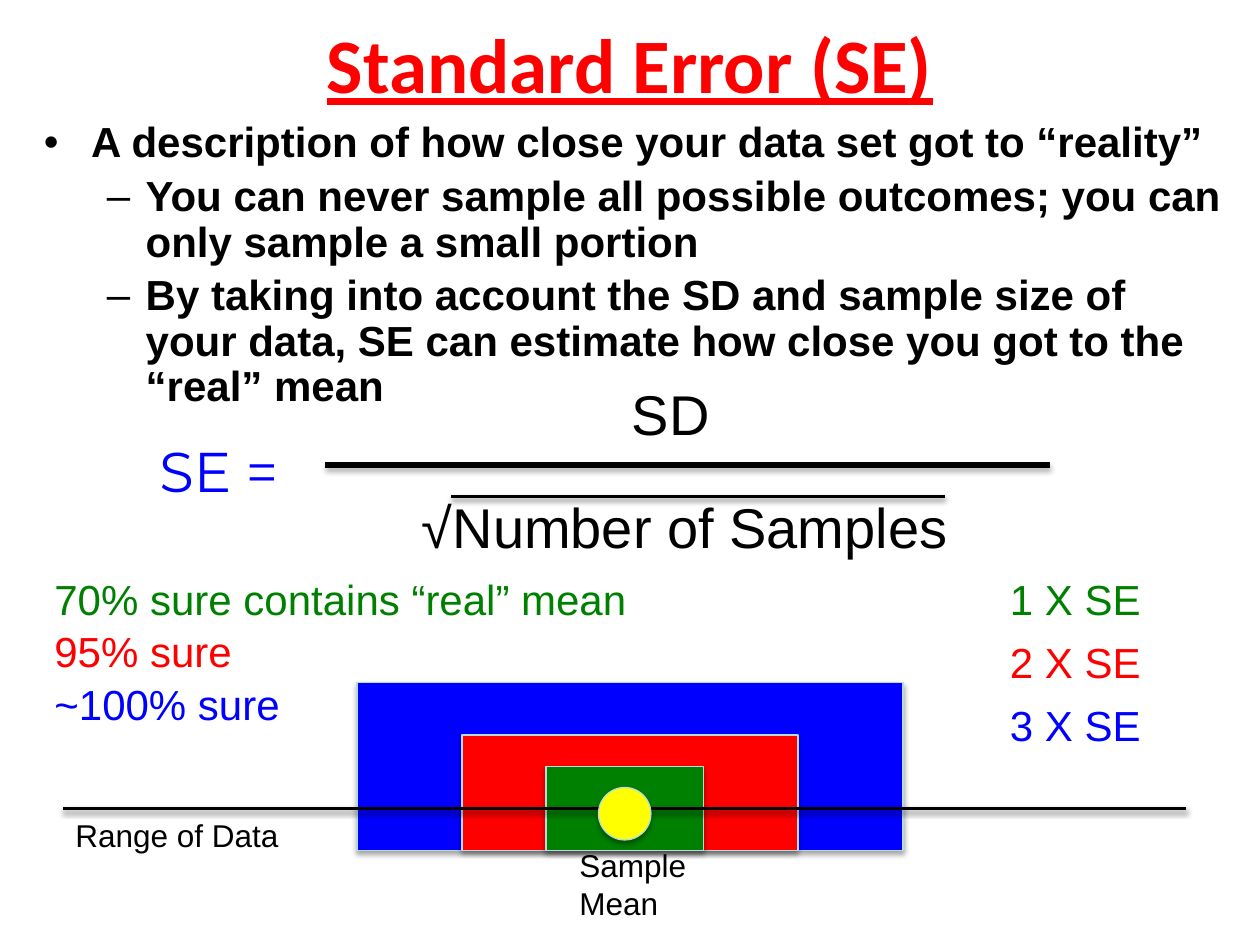
import pptx
import pptx.dml.color
import pptx.enum.shapes
import pptx.enum.text
import pptx.oxml.ns
import pptx.util
from lxml import etree

RGB = pptx.dml.color.RGBColor
SHAPES = pptx.enum.shapes.MSO_SHAPE
ALIGN = pptx.enum.text.PP_ALIGN
ANCHOR = pptx.enum.text.MSO_ANCHOR
FIT = pptx.enum.text.MSO_AUTO_SIZE

BLACK = RGB(0, 0, 0)
BLUE = RGB(0, 0, 255)
RED = RGB(255, 0, 0)
GREEN = RGB(0, 128, 0)
YELLOW = RGB(255, 255, 0)
OUTLINE = RGB(0xB6, 0xDC, 0xDF)

EMU_PER_PX = 7620  # 120 px to the inch
WIDTH, HEIGHT = 1200, 900

OUTCOMES = [
    (0, "A description of how close your data set got to “reality”"),
    (1, "You can never sample all possible outcomes; you can only sample a small portion"),
    (1, "By taking into account the SD and sample size of your data, "
        "SE can estimate how close you got to the “real” mean"),
]
# bullet, left margin and hanging indent for each level
BULLETS = [("•", 45, 45), ("–", 97, 37)]

# colour, certainty, label width, multiple, then the band's left, width, height
BANDS = [
    (BLUE, "~100% sure", 241, 3, 300, 520, 160),
    (RED, "95% sure", 194, 2, 400, 320, 110),
    (GREEN, "70% sure contains “real” mean", 575, 1, 480, 150, 80),
]


def px(*lengths):
    return [pptx.util.Emu(round(length * EMU_PER_PX)) for length in lengths]


def xml_child(parent, tag, **attributes):
    child = etree.SubElement(parent, pptx.oxml.ns.qn(tag))
    for name, value in attributes.items():
        child.set(name, str(value))
    return child


def add_shadow(effects, opacity=35, distance=1.8):
    shadow = xml_child(effects, "a:outerShdw", blurRad=pptx.util.Pt(3.1),
                       dist=pptx.util.Pt(distance), dir=5400000, rotWithShape=0)
    color = xml_child(shadow, "a:srgbClr", val=BLACK)
    xml_child(color, "a:alpha", val=opacity * 1000)


def format_span(para, text, size=24, color=BLACK, font="Arial", bold=False, underline=False):
    span = para.add_run()
    span.text = text
    span.font.size = pptx.util.Pt(size)
    span.font.name = font
    span.font.color.rgb = color
    span.font.bold = bold
    span.font.underline = underline


def add_text(page, text, left, top, width, height, wrap=True, grow=True,
             align=ALIGN.LEFT, anchor=ANCHOR.TOP, **span_format):
    box = page.shapes.add_textbox(*px(left, top, width, height))
    frame = box.text_frame
    frame.word_wrap = wrap
    frame.auto_size = FIT.SHAPE_TO_FIT_TEXT if grow else FIT.NONE
    frame.vertical_anchor = anchor
    para = frame.paragraphs[0]
    para.alignment = align
    format_span(para, text, **span_format)


def add_figure(page, kind, left, top, width, height, color):
    figure = page.shapes.add_shape(kind, *px(left, top, width, height))
    figure.fill.solid()
    figure.fill.fore_color.rgb = color
    figure.line.color.rgb = OUTLINE
    figure.line.width = pptx.util.Pt(0.75)
    figure.shadow.inherit = False
    add_shadow(figure._element.spPr.find(pptx.oxml.ns.qn("a:effectLst")))


def add_rule(page, left, top, width, weight, **shadow):
    rule = page.shapes.add_connector(pptx.enum.shapes.MSO_CONNECTOR.STRAIGHT,
                                     *px(left, top, left + width, top))
    rule.line.color.rgb = BLACK
    rule.line.width = pptx.util.Pt(weight)
    add_shadow(xml_child(rule._element.spPr, "a:effectLst"), **shadow)


def add_bands(page, left, top, width, height):
    """Nested confidence bands on a common base, with labels on both sides."""
    for color, certainty, label_width, multiple, offset, band_width, band_height in BANDS:
        add_figure(page, SHAPES.RECTANGLE, left + offset, top + height - band_height,
                   band_width, band_height, color)
        add_text(page, certainty, left, top + 50 * (multiple - 1), label_width, 60,
                 wrap=False, color=color)
        add_text(page, f"{multiple} X SE", left + width - 150, top + 60 * (multiple - 1),
                 150, 60, wrap=False, color=color)


def add_title(page, left, top, width, height):
    add_text(page, "Standard Error (SE)", left, top, width, height, grow=False,
             align=ALIGN.CENTER, anchor=ANCHOR.MIDDLE, size=44, color=RED,
             font="Calibri", bold=True, underline=True)


def add_outline(page, left, top, width, height):
    frame = page.shapes.add_textbox(*px(left, top, width, height)).text_frame
    frame.word_wrap = True
    for index, (level, text) in enumerate(OUTCOMES):
        para = frame.add_paragraph() if index else frame.paragraphs[0]
        para.level = level
        para.line_spacing = 0.9
        para.space_before = pptx.util.Pt(4.8)
        bullet, margin, hang = BULLETS[level]
        margin, hang = px(margin, hang)
        properties = para._p.get_or_add_pPr()
        properties.set("marL", str(margin))
        properties.set("indent", str(-hang))
        xml_child(properties, "a:buFont", typeface="Arial")
        xml_child(properties, "a:buChar", char=bullet)
        format_span(para, text, bold=True)


def add_formula(page, left, top, width, height):
    """SE as a fraction: SD over the root of the sample count."""
    add_text(page, "SE =", left, top + 54, 160, 77, size=32, color=BLUE, font="Montserrat")
    add_rule(page, left + 170, top + 87, width - 200, 3)
    add_text(page, "√Number of Samples", left + 250, top + height - 77, width - 250, 77, size=32)
    add_text(page, "SD", left + 450, top, 400, 77, size=32)
    add_rule(page, left + 290, top + 117, 470, 2, opacity=38, distance=1.6)


def add_range(page, left, top, width, height):
    add_rule(page, left, top, width, 2, opacity=38, distance=1.6)
    add_text(page, "Range of Data", left, top + 1, 250, height - 1, size=18)


def add_mean(page, left, top, width, height):
    add_figure(page, SHAPES.OVAL, left + 30, top, 50, 50, YELLOW)
    add_text(page, "Sample Mean", left, top + 50, width, height - 50, size=18)


def main():
    deck = pptx.Presentation()
    deck.slide_width, deck.slide_height = px(WIDTH, HEIGHT)
    page = deck.slides.add_slide(deck.slide_layouts[6])
    add_bands(page, 40, 540, 1060, 270)
    add_title(page, 20, 0, 1160, 120)
    add_outline(page, 30, 110, 1150, 280)
    add_formula(page, 140, 356, 890, 184)
    add_range(page, 60, 770, 1070, 49)
    add_mean(page, 540, 750, 130, 135)
    deck.save("out.pptx")


if __name__ == "__main__":
    main()
